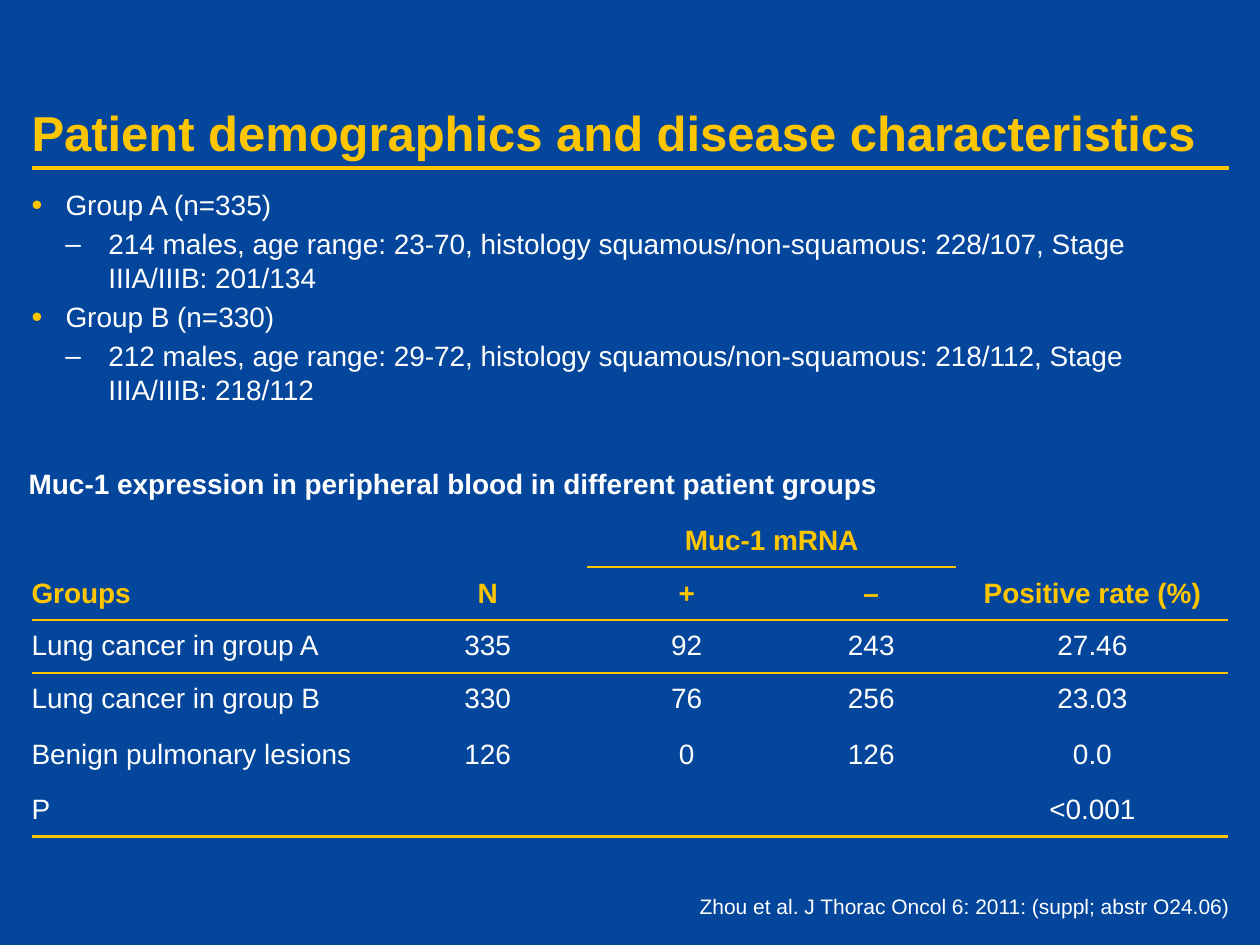
from dataclasses import dataclass

from lxml.etree import SubElement
from pptx import Presentation
from pptx.dml.color import RGBColor
from pptx.enum.shapes import MSO_CONNECTOR as Connector
from pptx.enum.text import MSO_ANCHOR as Anchor, MSO_AUTO_SIZE as AutoSize, PP_ALIGN as Align
from pptx.oxml import parse_xml
from pptx.oxml.ns import nsdecls, qn
from pptx.util import Inches, Pt


@dataclass(frozen=True)
class Theme:
    font: str = "Arial"
    background: str = "03469C"
    accent: str = "FFC600"
    text: str = "FFFFFF"
    title_size: int = 28
    body_size: int = 16
    source_size: int = 12
    title_rule: float = 2.25
    table_rule: float = 1.5


THEME = Theme()
LEFT, WIDTH = 0.25, 9.5
NO_GRID_STYLE = "{2D5ABB26-0587-4C30-8999-92F81FD0307C}"

BULLETS = [
    (0, "Group A (n=335)"),
    (1, "214 males, age range: 23-70, histology squamous/non-squamous: 228/107, Stage IIIA/IIIB: 201/134"),
    (0, "Group B (n=330)"),
    (1, "212 males, age range: 29-72, histology squamous/non-squamous: 218/112, Stage IIIA/IIIB: 218/112"),
]
COLUMN_WIDTHS = [2.83, 1.58, 1.58, 1.35, 2.16]
ROW_HEIGHTS = [0.42, 0.42, 0.42, 0.42, 0.46, 0.42]
HEADER_ROWS = 2
ROWS = [
    ["", "", "Muc-1 mRNA", "", ""],
    ["Groups", "N", "+", "–", "Positive rate (%)"],
    ["Lung cancer in group A", "335", "92", "243", "27.46"],
    ["Lung cancer in group B", "330", "76", "256", "23.03"],
    ["Benign pulmonary lesions", "126", "0", "126", "0.0"],
    ["P", "", "", "", "<0.001"],
]
RULED_COLUMNS = {0: range(2, 4), 1: range(5), 5: range(5)}


def write(para, text, size=THEME.body_size, color=THEME.text, bold=False, align=Align.LEFT):
    para.alignment = align
    span = para.add_run()
    span.text = text
    span.font.name = THEME.font
    span.font.size = Pt(size)
    span.font.bold = bold
    span.font.color.rgb = RGBColor.from_string(color)


def set_frame(frame, left, top, right, bottom, anchor):
    frame.margin_left, frame.margin_top = Inches(left), Inches(top)
    frame.margin_right, frame.margin_bottom = Inches(right), Inches(bottom)
    frame.vertical_anchor = anchor
    frame.auto_size = AutoSize.NONE
    frame.word_wrap = True


def place(shape, left, top, width, height):
    shape.left, shape.top = Inches(left), Inches(top)
    shape.width, shape.height = Inches(width), Inches(height)


def add_title(page, text):
    title = page.shapes.title
    place(title, LEFT, 0.25, WIDTH, 1.03)
    set_frame(title.text_frame, 0, 0.05, 0, 0, Anchor.BOTTOM)
    write(title.text_frame.paragraphs[0], text, size=THEME.title_size, color=THEME.accent, bold=True)


def add_rule(page, top):
    rule = page.shapes.add_connector(
        Connector.STRAIGHT, Inches(LEFT), Inches(top), Inches(LEFT + WIDTH), Inches(top))
    rule.line.color.rgb = RGBColor.from_string(THEME.accent)
    rule.line.width = Pt(THEME.title_rule)
    SubElement(rule.element.spPr, qn("a:effectLst"))


def set_bullet(para, level):
    para.level = level
    margin, hanging = [(0.27, 0.27), (0.61, 0.34)][level]
    props = para._p.get_or_add_pPr()
    props.set("marL", str(Inches(margin)))
    props.set("indent", str(-Inches(hanging)))
    if level == 0:
        color = SubElement(props, qn("a:buClr"))
        SubElement(color, qn("a:srgbClr"), val=THEME.accent)
        SubElement(props, qn("a:buSzPct"), val="110000")
    SubElement(props, qn("a:buFont"), typeface=THEME.font)
    SubElement(props, qn("a:buChar"), char="•–"[level])


def add_bullets(page, items):
    body = page.placeholders[1]
    place(body, LEFT, 1.44, WIDTH, 5.81)
    frame = body.text_frame
    set_frame(frame, 0, 0.05, 0, 0.05, Anchor.TOP)
    for index, (level, text) in enumerate(items):
        para = frame.add_paragraph() if index else frame.paragraphs[0]
        set_bullet(para, level)
        write(para, text)


def add_label(page, text, left, top, width, height, **style):
    box = page.shapes.add_textbox(Inches(left), Inches(top), Inches(width), Inches(height))
    box.text_frame.word_wrap = True
    write(box.text_frame.paragraphs[0], text, **style)


def add_border(cell, side):
    """Draw one side, "T" or "B"; draw B before T to keep the schema order."""
    line = parse_xml(
        f'<a:ln{side} {nsdecls("a")} w="{Pt(THEME.table_rule)}"><a:solidFill>'
        f'<a:srgbClr val="{THEME.accent}"/></a:solidFill></a:ln{side}>')
    cell._tc.get_or_add_tcPr().insert(0, line)


def fill_cell(cell, text, row, column):
    cell.fill.background()
    cell.vertical_anchor = Anchor.MIDDLE
    cell.margin_left = Inches(0.05 if column else 0)
    cell.margin_right = cell.margin_top = cell.margin_bottom = Inches(0.05)
    header = row < HEADER_ROWS
    if text:
        write(cell.text_frame.paragraphs[0], text, bold=header,
              color=THEME.accent if header else THEME.text,
              align=Align.CENTER if column else Align.LEFT)
    if column in RULED_COLUMNS.get(row, ()):
        add_border(cell, "B")
    if column in RULED_COLUMNS.get(row - 1, ()):
        add_border(cell, "T")


def add_results_table(page):
    table = page.shapes.add_table(
        len(ROWS), len(COLUMN_WIDTHS), Inches(LEFT), Inches(4.08),
        Inches(WIDTH), Inches(sum(ROW_HEIGHTS))).table
    table.first_row = table.horz_banding = False
    table._tbl.tblPr.find(qn("a:tableStyleId")).text = NO_GRID_STYLE
    for column, width in zip(table.columns, COLUMN_WIDTHS):
        column.width = Inches(width)
    for row, height in zip(table.rows, ROW_HEIGHTS):
        row.height = Inches(height)
    table.cell(0, 2).merge(table.cell(0, 3))
    for row, texts in enumerate(ROWS):
        for column, text in enumerate(texts):
            fill_cell(table.cell(row, column), text, row, column)


def main():
    deck = Presentation()
    deck.slide_width, deck.slide_height = Inches(10), Inches(7.5)
    page = deck.slides.add_slide(deck.slide_layouts[1])
    page.background.fill.solid()
    page.background.fill.fore_color.rgb = RGBColor.from_string(THEME.background)

    add_rule(page, 1.33)
    add_title(page, "Patient demographics and disease characteristics")
    add_bullets(page, BULLETS)
    add_label(page, "Muc-1 expression in peripheral blood in different patient groups",
              0.13, 3.65, 7.03, 0.37, bold=True)
    add_results_table(page)
    add_label(page, "Zhou et al. J Thorac Oncol 6: 2011: (suppl; abstr O24.06)",
              4.86, 7.04, 5, 0.3, size=THEME.source_size, align=Align.RIGHT)
    deck.save("out.pptx")


if __name__ == "__main__":
    main()
